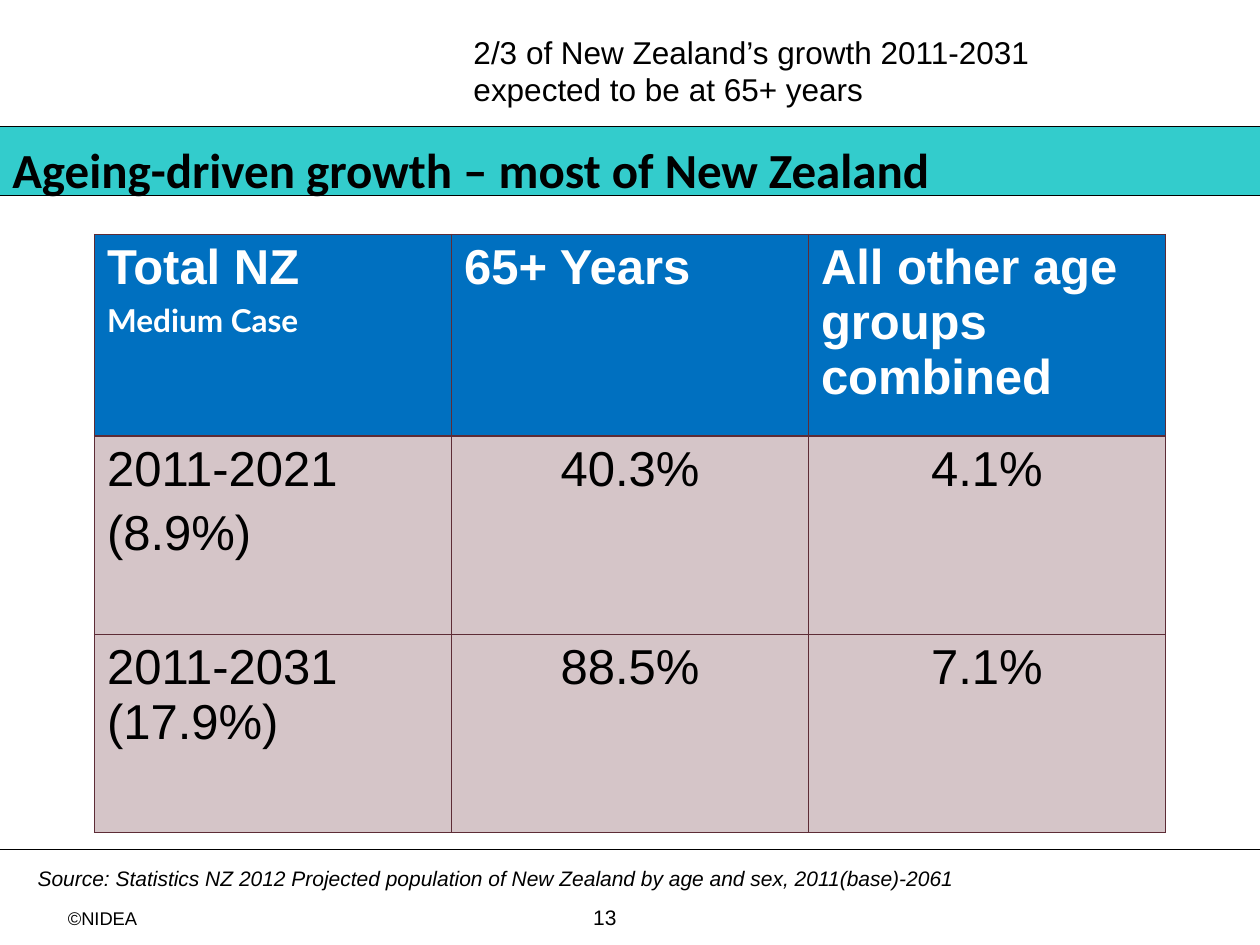
"""Build the slide on ageing-driven growth in New Zealand."""
from lxml import etree
from pptx import Presentation
from pptx.dml.color import RGBColor
from pptx.enum.shapes import MSO_CONNECTOR, MSO_SHAPE
from pptx.enum.text import MSO_ANCHOR, PP_ALIGN
from pptx.oxml.ns import qn
from pptx.util import Pt

LEFT, MID = PP_ALIGN.LEFT, PP_ALIGN.CENTER
RECT, LINE = MSO_SHAPE.RECTANGLE, MSO_CONNECTOR.STRAIGHT
CENTER = MSO_ANCHOR.MIDDLE
HEX = {
    "ink": "000000",
    "white": "FFFFFF",
    "teal": "33CCCC",
    "blue": "0070C0",
    "rose": "D5C5C8",
    "wine": "5D2C36",
}


def style(para, size, face="Arial", tone="ink", bold=False, slant=False):
    font = para.font
    font.size, font.name = Pt(size), face
    font.bold, font.italic = bold, slant
    font.color.rgb = RGBColor.from_string(HEX[tone])


def label(text, box, size, face="Arial", bold=False, slant=False):
    frame = slide.shapes.add_textbox(*map(Pt, box)).text_frame
    frame.word_wrap = True
    frame.text = text
    style(frame.paragraphs[0], size, face, bold=bold, slant=slant)
    return frame


deck = Presentation()
deck.slide_width, deck.slide_height = Pt(720), Pt(540)
slide = deck.slides.add_slide(deck.slide_layouts[6])

band = slide.shapes.add_shape(RECT, Pt(-8.64), Pt(72), Pt(737.28), Pt(39.6))
band.shadow.inherit = False
band.fill.solid()
band.fill.fore_color.rgb = RGBColor.from_string(HEX["teal"])
band.line.color.rgb = RGBColor.from_string(HEX["ink"])
band.line.width = Pt(0.5)

rule = slide.shapes.add_connector(LINE, Pt(0), Pt(485.3), Pt(720), Pt(485.3))
rule.line.color.rgb = RGBColor.from_string(HEX["ink"])
rule.line.width = Pt(0.75)
etree.SubElement(rule._element.spPr, qn("a:effectLst"))

label("©NIDEA", (31.7, 514.8, 62, 20.9), 10.5)
label("13", (331.9, 513.4, 158.4, 21.6), 12)
title = label("Ageing-driven growth – most of New Zealand",
              (0, 66.2, 720, 60.5), 28, "Calibri", bold=True)
title.vertical_anchor = CENTER

rows = [
    ["Total NZ\nMedium Case", "65+ Years", "All other age groups combined"],
    ["2011-2021\n(8.9%)", "40.3%", "4.1%"],
    ["2011-2031 (17.9%)", "88.5%", "7.1%"],
]
table = slide.shapes.add_table(3, 3, Pt(54), Pt(133.9), Pt(612), Pt(342)).table
table.first_row = table.horz_banding = False
for col in table.columns:
    col.width = Pt(204)
for row, high in zip(table.rows, (115.2, 113.4, 113.4)):
    row.height = Pt(high)

for r, texts in enumerate(rows):
    head = r == 0
    for c, text in enumerate(texts):
        cell = table.cell(r, c)
        cell.text = text
        props = cell._tc.get_or_add_tcPr()
        for side in ("a:lnL", "a:lnR", "a:lnT", "a:lnB"):
            edge = etree.SubElement(props, qn(side), w=str(Pt(0.75)))
            fill = etree.SubElement(edge, qn("a:solidFill"))
            etree.SubElement(fill, qn("a:srgbClr"), val=HEX["wine"])
        cell.fill.solid()
        shade = HEX["blue" if head else "rose"]
        cell.fill.fore_color.rgb = RGBColor.from_string(shade)
        for n, para in enumerate(cell.text_frame.paragraphs):
            small = head and n > 0
            size = 18 if small else 28
            para.alignment = LEFT if head or c == 0 else MID
            para.space_before = Pt(0.2 * size if n else 0)
            style(para, size, "Lato" if small else "Arial",
                  "white" if head else "ink", bold=head)

label("Source: Statistics NZ 2012 Projected population of New Zealand "
      "by age and sex, 2011(base)-2061",
      (14.4, 491, 566.6, 36), 12, slant=True)
label("2/3 of New Zealand’s growth 2011-2031 expected to be at 65+ years",
      (263.5, 15.1, 360, 51.1), 18)

deck.save("out.pptx")
